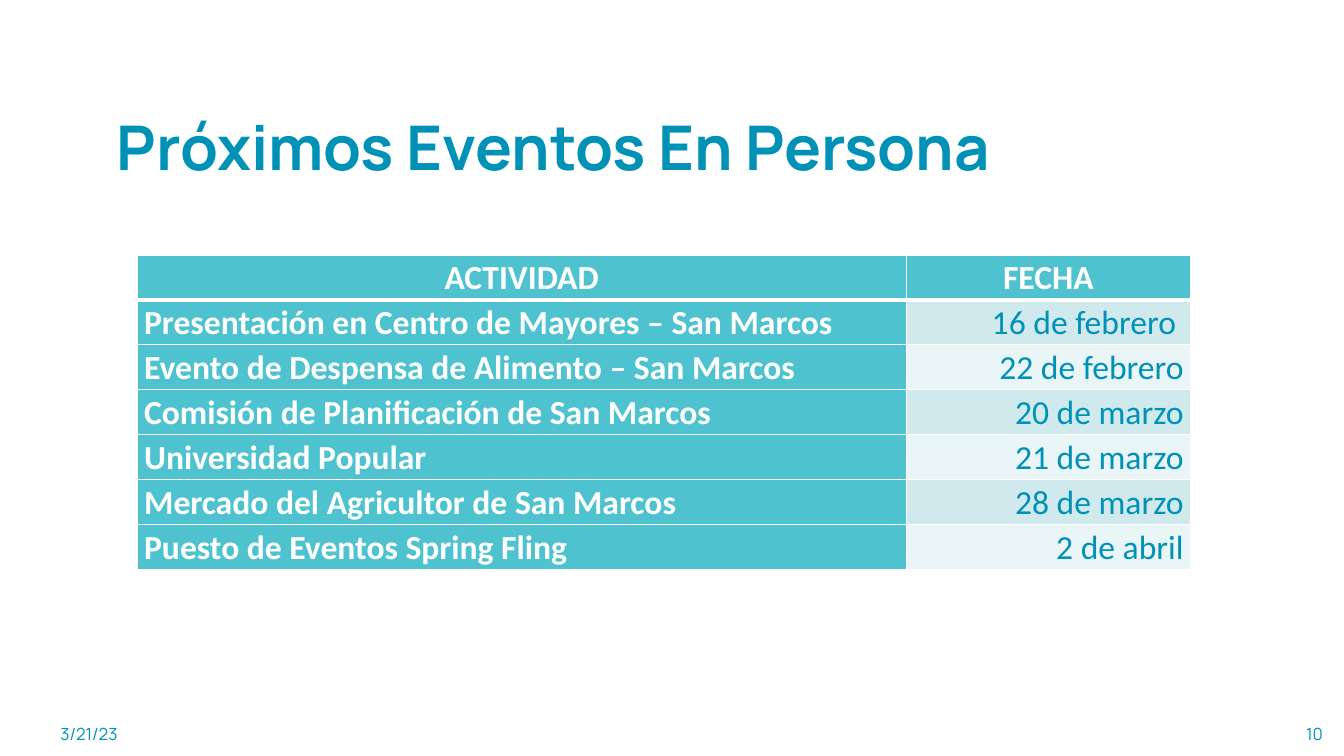
"""Build the slide of upcoming in-person events."""
from dataclasses import dataclass

from lxml import etree
from pptx import Presentation
from pptx.dml.color import RGBColor
from pptx.enum.text import MSO_ANCHOR, MSO_AUTO_SIZE, PP_ALIGN
from pptx.oxml.ns import qn
from pptx.slide import Slide
from pptx.table import _Cell
from pptx.text.text import _Paragraph
from pptx.util import Inches, Pt

LEFT, CENTER, RIGHT = PP_ALIGN.LEFT, PP_ALIGN.CENTER, PP_ALIGN.RIGHT
MIDDLE, TOP = MSO_ANCHOR.MIDDLE, MSO_ANCHOR.TOP
NO_AUTOFIT = MSO_AUTO_SIZE.NONE
WIDTH, HEIGHT = Inches(13.33), Inches(7.5)


@dataclass(frozen=True)
class Theme:
    blue: str = "0092B6"
    teal: str = "4EC3CF"
    white: str = "FFFFFF"
    bands: tuple[str, str] = ("D0E9ED", "E9F5F6")
    head_font: str = "Manrope"
    table_font: str = "Calibri"
    title_size: int = 44
    table_size: int = 24
    footer_size: int = 12


@dataclass(frozen=True)
class Box:
    """A frame in percent of the slide's size."""
    x: float
    y: float
    w: float
    h: float

    def emu(self) -> tuple[int, int, int, int]:
        return (int(WIDTH * self.x / 100), int(HEIGHT * self.y / 100),
                int(WIDTH * self.w / 100), int(HEIGHT * self.h / 100))


@dataclass(frozen=True)
class Event:
    activity: str
    date: str


@dataclass(frozen=True)
class Footer:
    text: str
    box: Box
    align: PP_ALIGN


THEME = Theme()
TITLE_BOX = Box(7.95, 10.27, 85.22, 19.33)
TABLE_BOX = Box(10.2, 33.73, 78.39, 41.6)
ACTIVITY_SHARE = 0.73
HEADER = Event("ACTIVIDAD", "FECHA")
EVENTS = [
    Event("Presentación en Centro de Mayores – San Marcos", "16 de febrero "),
    Event("Evento de Despensa de Alimento – San Marcos", "22 de febrero"),
    Event("Comisión de Planificación de San Marcos", "20 de marzo"),
    Event("Universidad Popular", "21 de marzo"),
    Event("Mercado del Agricultor de San Marcos", "28 de marzo"),
    Event("Puesto de Eventos Spring Fling", "2 de abril"),
]
FOOTERS = [
    Footer("3/21/23", Box(3.75, 95.07, 19.58, 4), LEFT),
    Footer("10", Box(81.77, 95.07, 17.4, 4), RIGHT),
]


def style(p: _Paragraph, font: str, size: int, color: str, bold: bool, align: PP_ALIGN) -> None:
    p.alignment = align
    p.font.name, p.font.size, p.font.bold = font, Pt(size), bold
    p.font.color.rgb = RGBColor.from_string(color)


def add_title(s: Slide, text: str) -> None:
    sp = s.shapes.title
    sp.left, sp.top, sp.width, sp.height = TITLE_BOX.emu()
    tf = sp.text_frame
    tf.text = text
    tf.word_wrap, tf.auto_size, tf.vertical_anchor = True, NO_AUTOFIT, MIDDLE
    p = tf.paragraphs[0]
    p.line_spacing = 0.9
    style(p, THEME.head_font, THEME.title_size, THEME.blue, True, LEFT)


def add_footer(s: Slide, footer: Footer) -> None:
    tf = s.shapes.add_textbox(*footer.box.emu()).text_frame
    tf.text, tf.word_wrap = footer.text, True
    style(tf.paragraphs[0], THEME.head_font, THEME.footer_size, THEME.blue, False, footer.align)


def set_borders(cell: _Cell, top: int, bottom: int) -> None:
    tc_pr = cell._tc.get_or_add_tcPr()
    for side, width in (("L", 1), ("R", 1), ("T", top), ("B", bottom)):
        ln = etree.SubElement(tc_pr, qn(f"a:ln{side}"), w=str(Pt(width)))
        fill = etree.SubElement(ln, qn("a:solidFill"))
        etree.SubElement(fill, qn("a:srgbClr"), val=THEME.white)


def fill_cell(cell: _Cell, text: str, row: int, fill: str, color: str,
              bold: bool, align: PP_ALIGN) -> None:
    set_borders(cell, 3 if row == 1 else 1, 3 if row == 0 else 1)
    cell.fill.solid()
    cell.fill.fore_color.rgb = RGBColor.from_string(fill)
    cell.margin_left = cell.margin_right = Inches(0.07)
    cell.margin_top = cell.margin_bottom = 0
    cell.vertical_anchor = TOP
    cell.text = text
    p = cell.text_frame.paragraphs[0]
    p.line_spacing = 1.07
    style(p, THEME.table_font, THEME.table_size, color, bold, align)


def add_events(s: Slide, header: Event, events: list[Event]) -> None:
    x, y, w, h = TABLE_BOX.emu()
    rows = [header, *events]
    table = s.shapes.add_table(len(rows), 2, x, y, w, h).table
    table.columns[0].width = int(w * ACTIVITY_SHARE)
    table.columns[1].width = w - table.columns[0].width
    for i, event in enumerate(rows):
        table.rows[i].height = h // len(rows)
        is_head = i == 0
        fill_cell(table.cell(i, 0), event.activity, i, THEME.teal, THEME.white,
                  True, CENTER if is_head else LEFT)
        fill_cell(table.cell(i, 1), event.date, i,
                  THEME.teal if is_head else THEME.bands[(i - 1) % 2],
                  THEME.white if is_head else THEME.blue,
                  is_head, CENTER if is_head else RIGHT)


def main() -> None:
    prs = Presentation()
    prs.slide_width, prs.slide_height = WIDTH, HEIGHT
    s = prs.slides.add_slide(prs.slide_layouts[5])
    add_title(s, "Próximos Eventos En Persona")
    for footer in FOOTERS:
        add_footer(s, footer)
    add_events(s, HEADER, EVENTS)
    prs.save("out.pptx")


if __name__ == "__main__":
    main()
